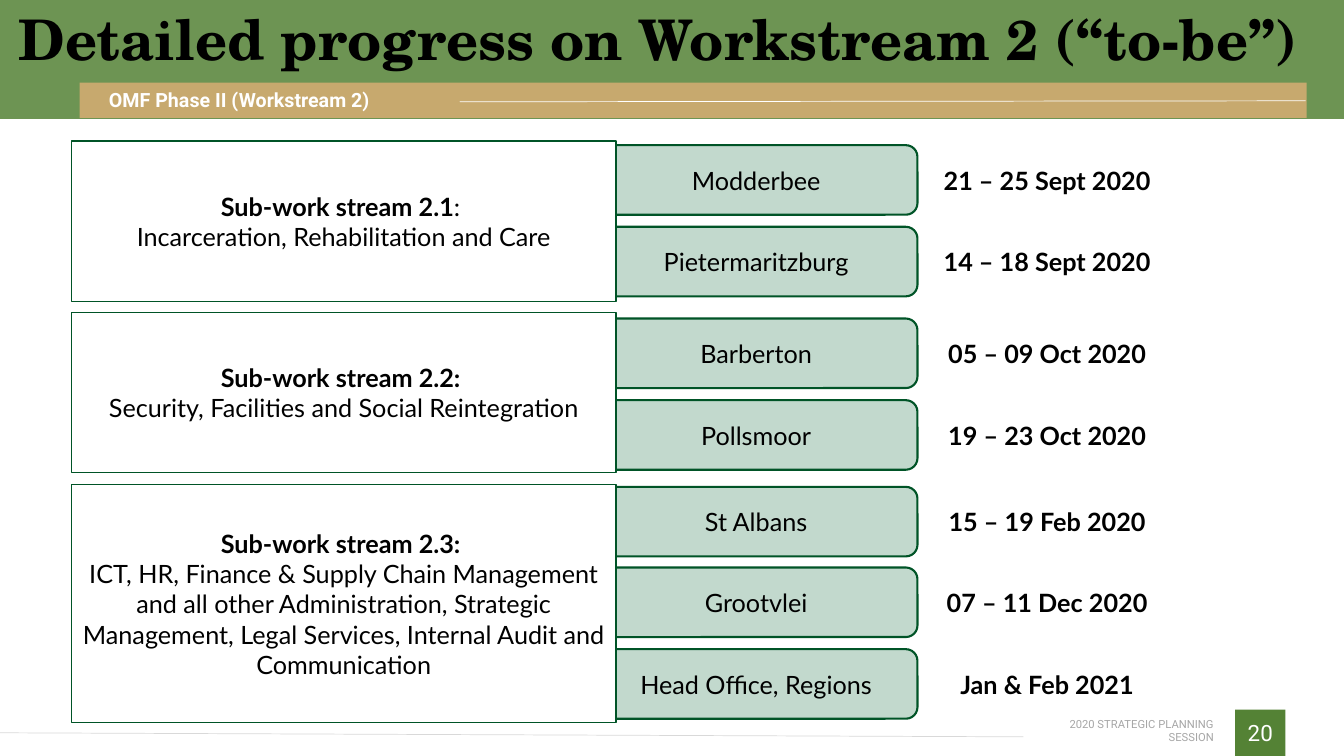
from lxml import etree
from pptx import Presentation
from pptx.dml.color import RGBColor
from pptx.enum.shapes import MSO_CONNECTOR, MSO_SHAPE
from pptx.enum.text import MSO_ANCHOR, PP_ALIGN
from pptx.oxml.ns import qn
from pptx.util import Inches, Pt

GREEN = RGBColor(0x54, 0x82, 0x35)
DARK_GREEN = RGBColor(0x00, 0x54, 0x27)
PALE_GREEN = RGBColor(0xC2, 0xD9, 0xCD)
TAN = RGBColor(0xC7, 0xA9, 0x6E)
GREY = RGBColor(0xA6, 0xA6, 0xA6)
LIGHT_GREY = RGBColor(0xD9, 0xD9, 0xD9)
WHITE = RGBColor(0xFF, 0xFF, 0xFF)
BLACK = RGBColor(0, 0, 0)

ROW_H = 0.69

# Box top, box height, heading, colon, description, sites as (top, name, dates)
STREAMS = [
    (1.4, 1.59, "Sub-work stream 2.1", False,
     "Incarceration, Rehabilitation and Care",
     [(1.44, "Modderbee", "21 – 25 Sept 2020"),
      (2.25, "Pietermaritzburg", "14 – 18 Sept 2020")]),
    (3.1, 1.59, "Sub-work stream 2.2", True,
     "Security, Facilities and Social Reintegration",
     [(3.16, "Barberton", "05 – 09 Oct 2020"),
      (3.97, "Pollsmoor", "19 – 23 Oct 2020")]),
    (4.81, 2.36, "Sub-work stream 2.3", True,
     "ICT, HR, Finance & Supply Chain Management and all other Administration, "
     "Strategic Management, Legal Services, Internal Audit and Communication",
     [(4.83, "St Albans", "15 – 19 Feb 2020"),
      (5.63, "Grootvlei", "07 – 11 Dec 2020"),
      (6.44, "Head Office, Regions", "Jan & Feb 2021")]),
]


def set_font(p, size, name="Lato", color=BLACK, bold=None):
    p.font.size = Pt(size)
    p.font.name = name
    p.font.color.rgb = color
    p.font.bold = bold


def add_box(s, x, y, w, h, fill, kind=MSO_SHAPE.RECTANGLE, line=None, width=1):
    sp = s.shapes.add_shape(kind, Inches(x), Inches(y), Inches(w), Inches(h))
    sp.shadow.inherit = False
    sp.fill.solid()
    sp.fill.fore_color.rgb = fill
    if line is None:
        sp.line.fill.background()
    else:
        sp.line.color.rgb = line
        sp.line.width = Pt(width)
    sp.text_frame.word_wrap = True
    sp.text_frame.vertical_anchor = MSO_ANCHOR.MIDDLE
    return sp


def write(sp, text, size=18, name="Lato", color=BLACK, bold=None, align=PP_ALIGN.CENTER):
    p = sp.text_frame.paragraphs[0]
    p.text = text
    p.alignment = align
    set_font(p, size, name, color, bold)
    return p


def add_text(s, x, y, w, h, text, size, name, color, bold=None,
             align=PP_ALIGN.LEFT, inset=True):
    sp = s.shapes.add_textbox(Inches(x), Inches(y), Inches(w), Inches(h))
    tf = sp.text_frame
    tf.word_wrap = True
    if not inset:
        tf.margin_left = tf.margin_right = tf.margin_top = tf.margin_bottom = 0
        tf.vertical_anchor = MSO_ANCHOR.MIDDLE
    return write(sp, text, size, name, color, bold, align)


def add_rule(s, x1, y1, x2, y2, color):
    line = s.shapes.add_connector(MSO_CONNECTOR.STRAIGHT, Inches(x1), Inches(y1),
                                  Inches(x2), Inches(y2))
    line.line.color.rgb = color
    line.line.width = Pt(0.5)
    etree.SubElement(line._element.spPr, qn("a:effectLst"))


def add_footer(s):
    write(add_box(s, 12.25, 7.04, 0.5, 0.46, GREEN), "20", 16, "Roboto", WHITE)
    add_text(s, 10.15, 7.18, 1.89, 0.13, "2020 STRATEGIC PLANNING SESSION",
             8, "Roboto", GREY, align=PP_ALIGN.RIGHT, inset=False)
    add_rule(s, 10.15, 7.31, 0, 7.27, LIGHT_GREY)


def add_header(s):
    band = add_box(s, 0, 0, 13.33, 1.18, GREEN)
    color = band._element.spPr.find(qn("a:solidFill"))[0]
    etree.SubElement(color, qn("a:alpha")).set("val", "85000")
    add_box(s, 0.79, 0.82, 12.17, 0.35, TAN)
    add_rule(s, 4.56, 1.01, 12.95, 1, WHITE)
    add_text(s, 0.09, 0, 13.06, 0.77, "Detailed progress on Workstream 2 (“to-be”)",
             40, "TeX Gyre Schola", BLACK, True)
    p = add_text(s, 1.08, 0.87, 3.48, 0.24, "OMF Phase II (Workstream 2)",
                 14, "Roboto", WHITE, True, inset=False)
    p.space_after = Pt(3)


def add_site(s, y, site, dates):
    rounded = MSO_SHAPE.ROUNDED_RECTANGLE
    write(add_box(s, 5.9, y, 3.2, ROW_H, PALE_GREEN, rounded, DARK_GREEN, 1.5), site)
    write(add_box(s, 9.18, y, 2.41, ROW_H, WHITE, rounded), dates, bold=True)


def add_stream(s, y, h, heading, bold_colon, description):
    sp = add_box(s, 0.71, y, 5.4, h, WHITE, line=DARK_GREEN)
    p = write(sp, "")
    for text, bold in ((heading, True), (": ", bold_colon)):
        r = p.add_run()
        r.text = text
        r.font.bold = bold
    p = sp.text_frame.add_paragraph()
    p.text = description
    p.alignment = PP_ALIGN.CENTER
    set_font(p, 18)


def main():
    prs = Presentation()
    prs.slide_width, prs.slide_height = Inches(13.33), Inches(7.5)
    s = prs.slides.add_slide(prs.slide_layouts[6])
    add_footer(s)
    add_header(s)
    # Sites go first so that each stream box overlaps their left ends
    for y, h, heading, bold_colon, description, sites in STREAMS:
        for site in sites:
            add_site(s, *site)
        add_stream(s, y, h, heading, bold_colon, description)
    prs.save("out.pptx")


if __name__ == "__main__":
    main()
